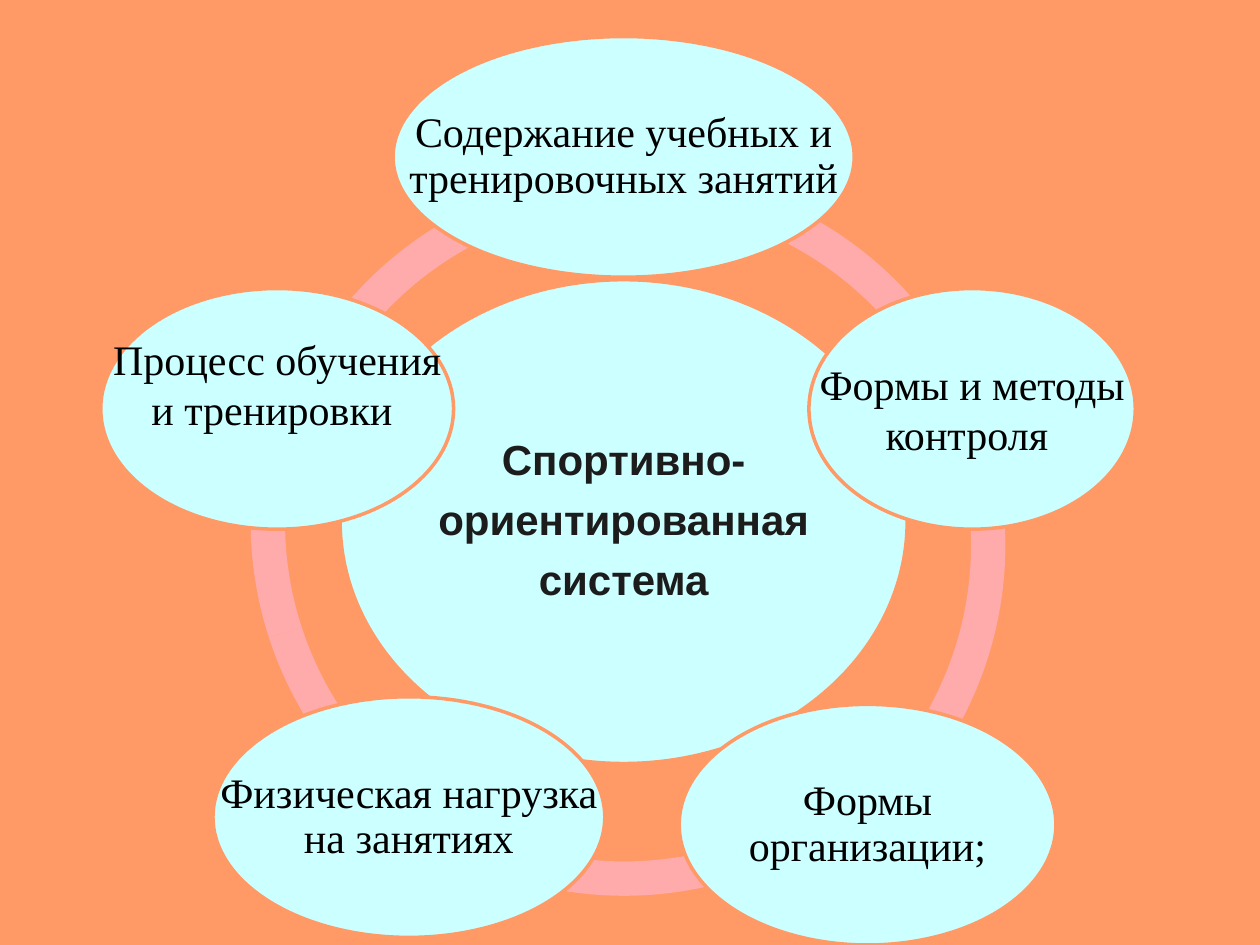
from dataclasses import dataclass

from lxml.etree import SubElement
from pptx import Presentation
from pptx.dml.color import RGBColor
from pptx.enum.shapes import MSO_SHAPE
from pptx.enum.text import MSO_ANCHOR, PP_ALIGN
from pptx.oxml.ns import qn
from pptx.slide import Slide
from pptx.util import Emu, Pt

EMU_PER_PX = 9144
ORANGE = RGBColor(0xFF, 0x99, 0x66)
PINK = RGBColor(0xFF, 0xAB, 0xAB)
PALE_CYAN = RGBColor(0xCC, 0xFF, 0xFF)
CHARCOAL = RGBColor(0x1C, 0x1C, 0x1C)
BLACK = RGBColor(0x00, 0x00, 0x00)
RING_SIZE = 593
RING_THICKNESS = 0.046
DEGREE = 0.6
TOPIC_HEIGHT = 191
INSET = 3


@dataclass(frozen=True)
class RingArc:
    left: int
    top: int
    start: float
    end: float


@dataclass(frozen=True)
class Topic:
    lines: tuple[str, ...]
    left: int
    top: int
    width: int
    height: int = TOPIC_HEIGHT
    font: str = "Times New Roman"
    color: RGBColor = BLACK
    bold: bool = False
    tight: bool = True
    bottom_inset: int = INSET


RING = (
    RingArc(199, 118, 118.8, 162),
    RingArc(199, 118, 75.6, 118.8),
    RingArc(213, 129, 31.2, 77.83),
    RingArc(205, 136, 202.9, 29.94),
    RingArc(199, 118, 162, 205.2),
)

TOPICS = (
    Topic(("Спортивно-", "ориентированная", "система"), 270, 222, 450, 384,
          font="Arial", color=CHARCOAL, bold=True),
    Topic(("Содержание учебных и тренировочных занятий",), 312, 29, 366),
    Topic(("Формы и методы контроля ",), 642, 229, 259, tight=False),
    Topic(("Формы организации;",), 539, 559, 299),
    Topic(("Физическая нагрузка на занятиях",), 169, 553, 311),
    Topic(("Процесс обучения и тренировки ",), 80, 229, 280,
          tight=False, bottom_inset=43),
)


def px(length: int) -> Emu:
    return Emu(length * EMU_PER_PX)


def draw_arc(slide: Slide, arc: RingArc) -> None:
    band = slide.shapes.add_shape(MSO_SHAPE.BLOCK_ARC, px(arc.left), px(arc.top),
                                  px(RING_SIZE), px(RING_SIZE))
    band.shadow.inherit = False
    band.adjustments[0] = arc.start * DEGREE
    band.adjustments[1] = arc.end * DEGREE
    band.adjustments[2] = RING_THICKNESS
    band.fill.solid()
    band.fill.fore_color.rgb = PINK
    band.line.fill.background()


def draw_topic(slide: Slide, topic: Topic) -> None:
    bounds = (px(topic.left), px(topic.top), px(topic.width), px(topic.height))
    oval = slide.shapes.add_shape(MSO_SHAPE.OVAL, *bounds)
    oval.shadow.inherit = False
    oval.fill.solid()
    oval.fill.fore_color.rgb = PALE_CYAN
    oval.line.color.rgb = ORANGE
    oval.line.width = Pt(2)

    frame = slide.shapes.add_textbox(*bounds).text_frame
    frame.word_wrap = True
    frame.vertical_anchor = MSO_ANCHOR.MIDDLE
    frame.margin_left = frame.margin_right = frame.margin_top = px(INSET)
    frame.margin_bottom = px(topic.bottom_inset)
    frame.text = "\n".join(topic.lines)
    for paragraph in frame.paragraphs:
        paragraph.alignment = PP_ALIGN.CENTER
        if topic.tight:
            paragraph.line_spacing = 0.9
            spacing = SubElement(paragraph._p.get_or_add_pPr(), qn("a:spcAft"))
            SubElement(spacing, qn("a:spcPct")).set("val", "35000")
        paragraph.font.name = topic.font
        paragraph.font.size = Pt(24)
        paragraph.font.bold = topic.bold
        paragraph.font.color.rgb = topic.color


def main() -> None:
    presentation = Presentation()
    presentation.slide_width = px(1000)
    presentation.slide_height = px(750)
    slide = presentation.slides.add_slide(presentation.slide_layouts[6])
    slide.background.fill.solid()
    slide.background.fill.fore_color.rgb = ORANGE
    for arc in RING:
        draw_arc(slide, arc)
    for topic in TOPICS:
        draw_topic(slide, topic)
    presentation.save("out.pptx")


if __name__ == "__main__":
    main()
